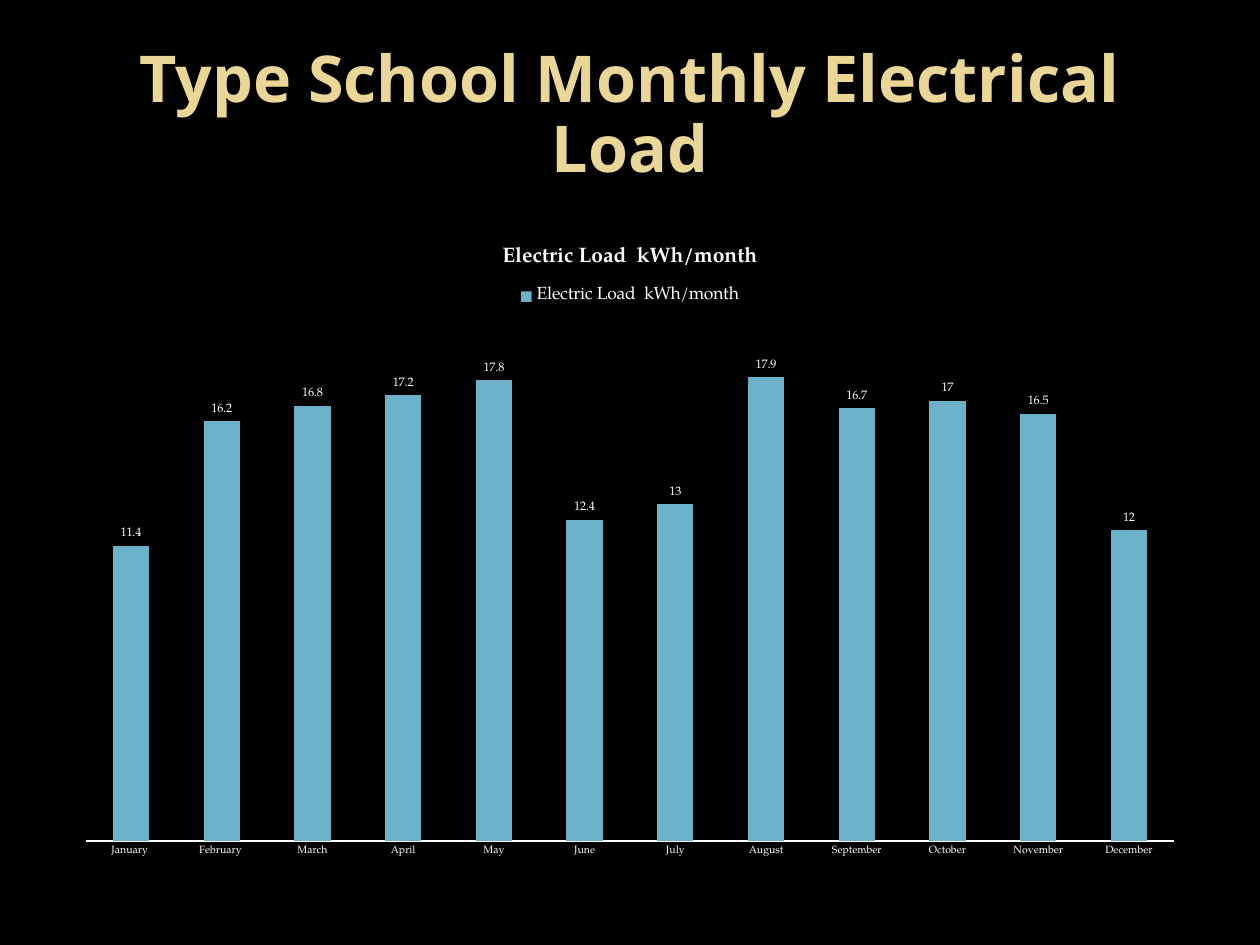
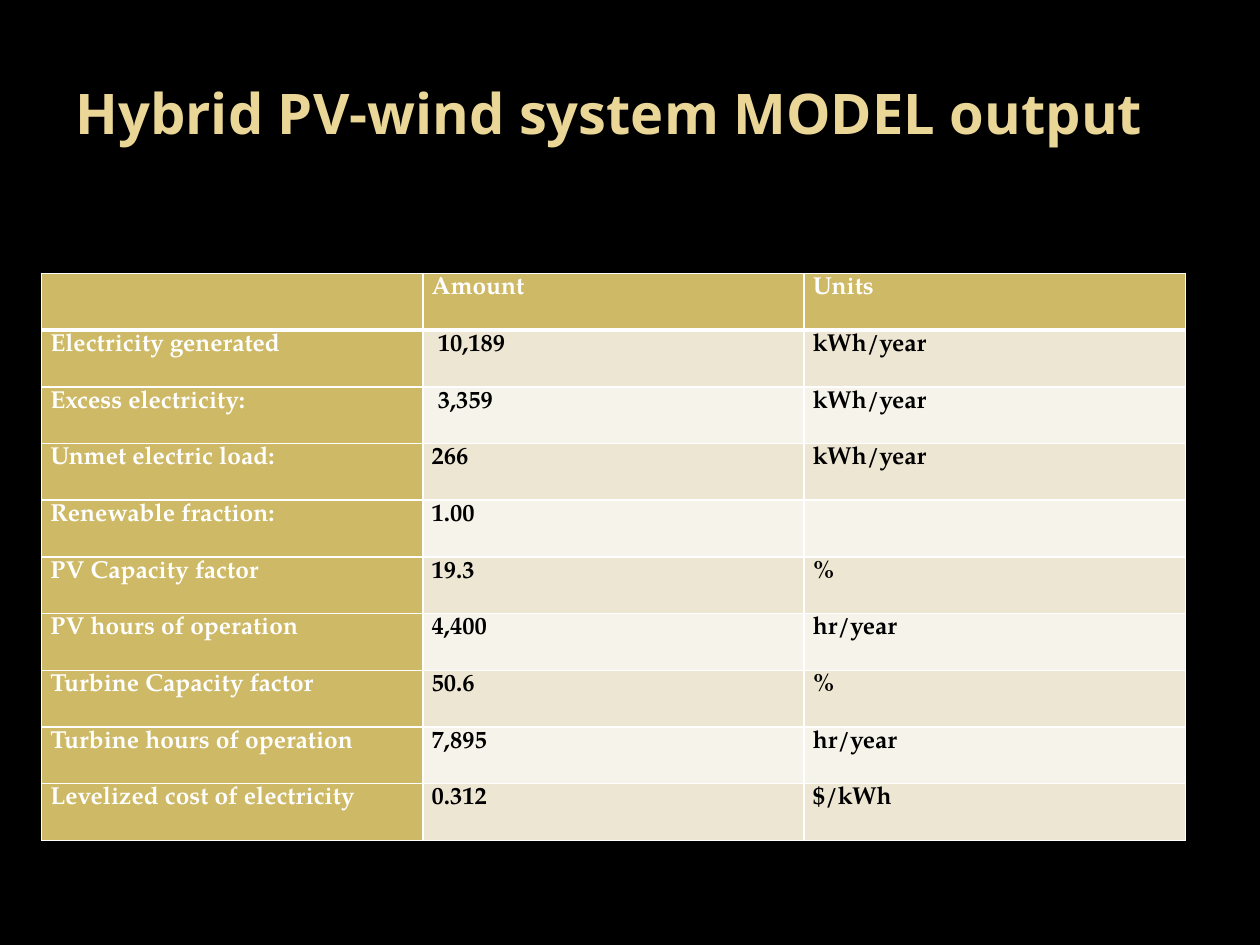
from lxml.etree import SubElement
from pptx import Presentation
from pptx.chart.data import CategoryChartData
from pptx.dml.color import RGBColor
from pptx.enum.chart import XL_CHART_TYPE, XL_LABEL_POSITION, XL_LEGEND_POSITION, XL_TICK_MARK
from pptx.enum.text import MSO_ANCHOR, PP_ALIGN
from pptx.oxml.ns import qn
from pptx.util import Inches, Pt

COLORS = {
    "background": "000000",
    "title": "EAD696",
    "light": "FFFFFF",
    "dark": "000000",
    "bar": "6BB1C9",
    "header": "CEB966",
    "odd_row": "EDE6D3",
    "even_row": "F6F3EA",
}
TITLE_FONT = "Open Sans"
BODY_FONT = "TeX Gyre Pagella"

LOAD_NAME = "Electric Load  kWh/month"
MONTHLY_LOAD = {
    "January ": 11.4, "February ": 16.2, "March": 16.8, "April": 17.2,
    "May": 17.8, "June": 12.4, "July": 13, "August": 17.9,
    "September": 16.7, "October": 17, "November": 16.5, "December": 12,
}
SYSTEM_OUTPUT = [
    ("", "Amount", "Units"),
    ("Electricity generated", " 10,189", "kWh/year"),
    ("Excess electricity:", " 3,359", "kWh/year"),
    ("Unmet electric load:", "266", "kWh/year"),
    ("Renewable fraction:", "1.00", ""),
    ("PV Capacity factor", "19.3", "%"),
    ("PV hours of operation", "4,400", "hr/year"),
    ("Turbine Capacity factor", "50.6", "%"),
    ("Turbine hours of operation", "7,895", "hr/year"),
    ("Levelized cost of electricity", "0.312", "$/kWh"),
]


def color(name):
    return RGBColor.from_string(COLORS[name])


def style_font(font, face, size, color_name, bold=False):
    font.name = face
    font.size = Pt(size)
    font.bold = bold
    font.color.rgb = color(color_name)


def add_titled_slide(prs, text, size, align):
    slide = prs.slides.add_slide(prs.slide_layouts[6])
    slide.background.fill.solid()
    slide.background.fill.fore_color.rgb = color("background")
    title = slide.shapes.add_textbox(Inches(0.5), Inches(0.3), Inches(9), Inches(1.25))
    frame = title.text_frame
    frame.word_wrap = True
    frame.vertical_anchor = MSO_ANCHOR.MIDDLE
    frame.text = text
    heading = frame.paragraphs[0]
    heading.alignment = align
    heading.line_spacing = 0.9
    style_font(heading.runs[0].font, TITLE_FONT, size, "title", True)
    return slide


def add_load_chart(slide):
    load = CategoryChartData()
    load.categories = MONTHLY_LOAD.keys()
    load.add_series(LOAD_NAME, MONTHLY_LOAD.values())
    chart = slide.shapes.add_chart(
        XL_CHART_TYPE.COLUMN_CLUSTERED,
        Inches(0.5), Inches(1.75), Inches(9), Inches(5.15), load).chart
    style_font(chart.font, BODY_FONT, 10, "light")

    chart.has_title = True
    chart.chart_title.text_frame.text = LOAD_NAME
    heading = chart.chart_title.text_frame.paragraphs[0]
    style_font(heading.runs[0].font, BODY_FONT, 12, "light", True)
    chart.has_legend = True
    chart.legend.position = XL_LEGEND_POSITION.TOP
    chart.legend.include_in_layout = False

    months = chart.category_axis
    months.major_tick_mark = XL_TICK_MARK.NONE
    months.format.line.color.rgb = color("light")
    months.format.line.width = Pt(0.75)
    style_font(months.tick_labels.font, BODY_FONT, 6, "light")
    amounts = chart.value_axis
    amounts.visible = False
    amounts.has_major_gridlines = False
    amounts.minimum_scale = 0
    amounts.maximum_scale = 20

    plot = chart.plots[0]
    plot.gap_width = 150
    plot.vary_by_categories = False
    bars = plot.series[0].format
    bars.fill.solid()
    bars.fill.fore_color.rgb = color("bar")
    plot.has_data_labels = True
    labels = plot.data_labels
    labels.show_value = True
    labels.position = XL_LABEL_POSITION.OUTSIDE_END
    style_font(labels.font, BODY_FONT, 7, "light")


def set_borders(cell, top, bottom):
    properties = cell._tc.get_or_add_tcPr()
    for side, width in (("L", 1), ("R", 1), ("T", top), ("B", bottom)):
        line = SubElement(properties, qn(f"a:ln{side}"), w=str(Pt(width)))
        fill = SubElement(line, qn("a:solidFill"))
        SubElement(fill, qn("a:srgbClr"), val=COLORS["light"])


def fill_cell(cell, text, row, column):
    is_heading = row == 0 or column == 0
    set_borders(cell, 3 if row == 1 else 1, 3 if row == 0 else 1)
    cell.fill.solid()
    band = "odd_row" if row % 2 else "even_row"
    cell.fill.fore_color.rgb = color("header" if is_heading else band)
    cell.margin_left = cell.margin_right = Inches(0.07)
    cell.margin_top = cell.margin_bottom = 0
    cell.text = text
    entry = cell.text_frame.paragraphs[0]
    entry.line_spacing = 1.15
    for run in entry.runs:
        style_font(run.font, BODY_FONT, 14, "light" if is_heading else "dark", True)


def add_output_table(slide):
    table = slide.shapes.add_table(
        len(SYSTEM_OUTPUT), 3,
        Inches(0.33), Inches(2.17), Inches(9.08), Inches(4.5)).table
    for row, entries in enumerate(SYSTEM_OUTPUT):
        for column, text in enumerate(entries):
            fill_cell(table.cell(row, column), text, row, column)


def main():
    prs = Presentation()
    prs.slide_width = Inches(10)
    prs.slide_height = Inches(7.5)
    add_load_chart(add_titled_slide(
        prs, "Type School Monthly Electrical Load", 36.9, PP_ALIGN.CENTER))
    add_output_table(add_titled_slide(
        prs, "Hybrid PV-wind system MODEL output", 32, PP_ALIGN.LEFT))
    prs.save("out.pptx")


if __name__ == "__main__":
    main()
